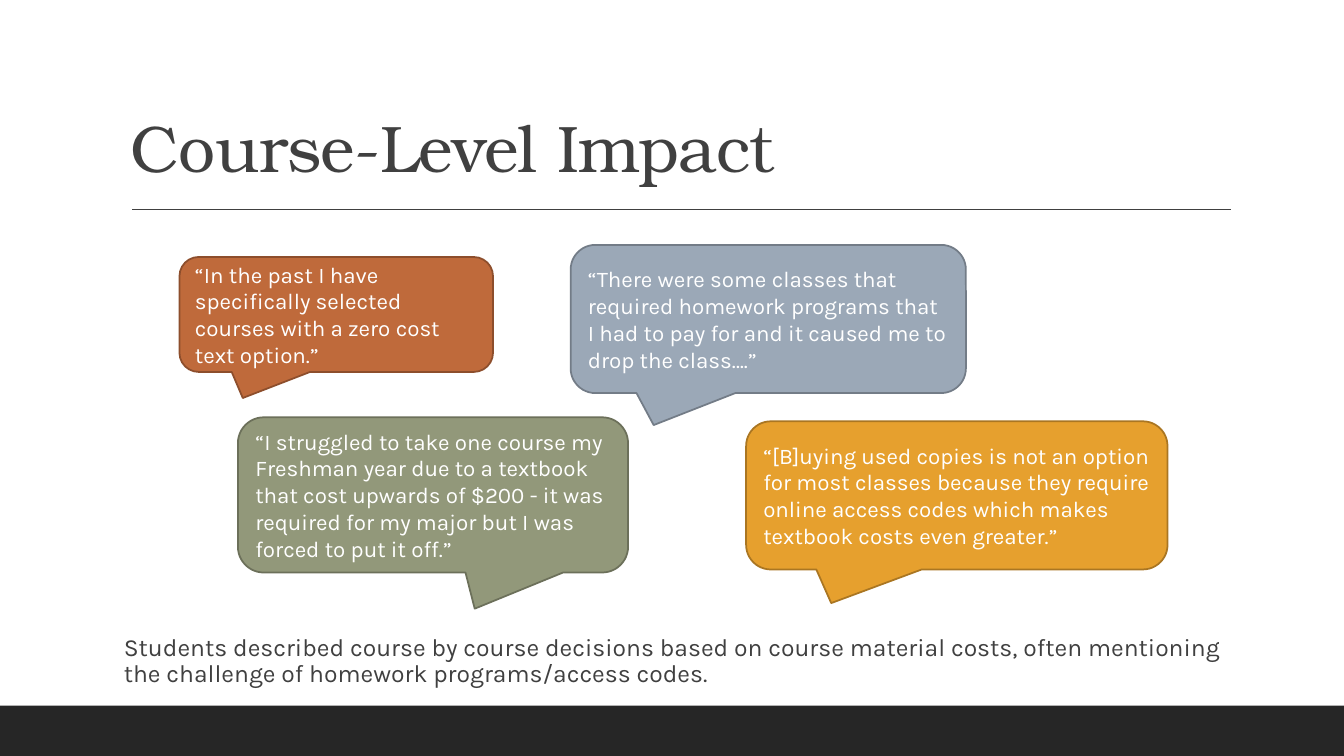
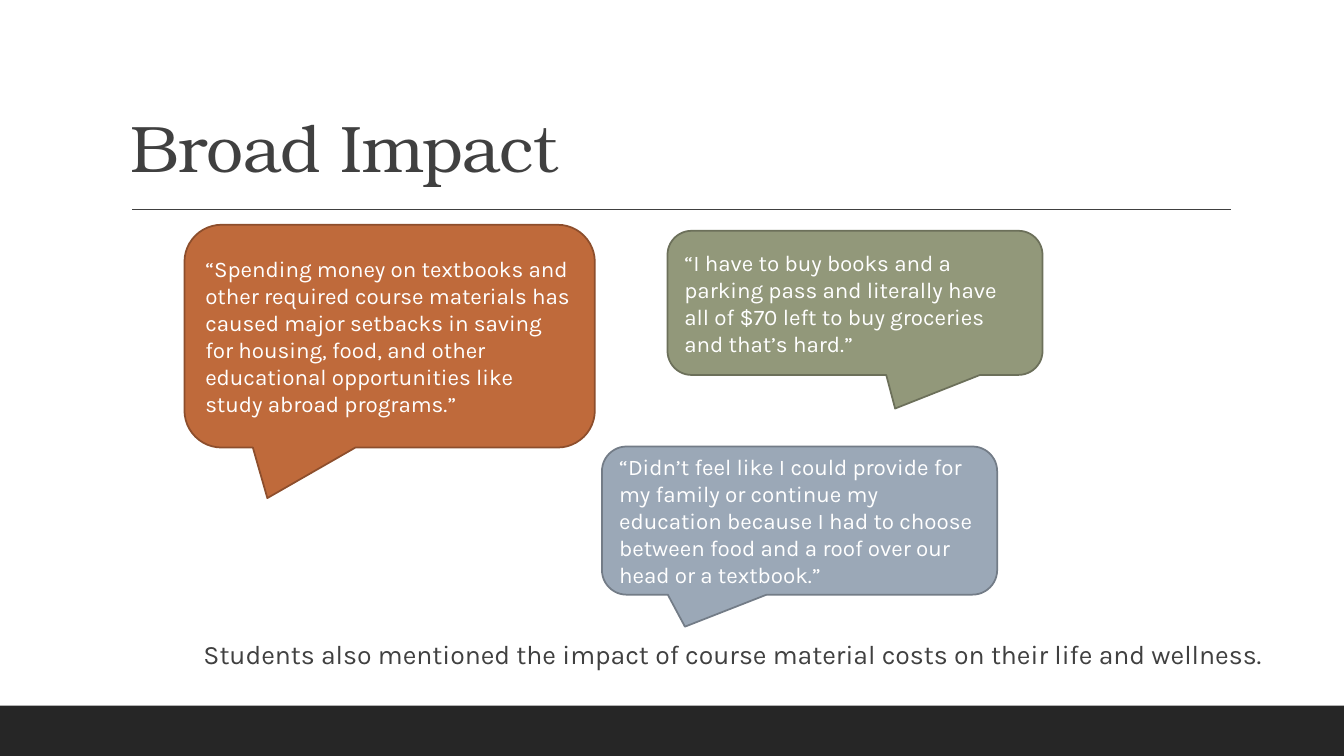
import pptx
import pptx.util
import pptx.dml.color
import pptx.enum.shapes
import pptx.enum.text
import lxml.etree
from dataclasses import dataclass

Inches, Pt = pptx.util.Inches, pptx.util.Pt
SHAPE = pptx.enum.shapes.MSO_SHAPE
ANCHOR = pptx.enum.text.MSO_ANCHOR
ALIGN = pptx.enum.text.PP_ALIGN


@dataclass(frozen=True)
class Theme:
    head: str = "TeX Gyre Bonum"
    body: str = "Karla"
    ink: str = "404040"
    band: str = "262626"
    white: str = "FFFFFF"
    title: float = 47
    quote: float = 16
    edge: float = 1.25


THEME = Theme()

# Callout style: fill, outline, tail tip from the centre as shares of the size
STYLES = {
    "blue": ("9BA8B7", "737C87", (-0.29, 0.716)),
    "rust": ("BF6A3B", "8D4E2C", (-0.298, 0.727)),
    "green": ("92987A", "6C705A", (0.107, 0.733)),
    "gold": ("E6A02E", "AA7622", (-0.298, 0.727)),
}

SLIDES = [
    {
        "title": "Course-Level Impact",
        "note": "Students described course by course decisions based on course "
                "material costs, often mentioning the challenge of homework "
                "programs/access codes.",
        "left": 1.13, "size": 17.6, "lead": 0.9,
        "quotes": [
            ("blue", (5.66, 2.43, 3.92, 1.47),
             "“There were some classes that required homework programs that "
             "I had to pay for and it caused me to drop the class….”"),
            ("rust", (1.78, 2.55, 3.11, 1.14),
             "“In the past I have specifically selected courses with a zero "
             "cost text option.”"),
            ("green", (2.36, 4.14, 3.87, 1.54),
             "“I struggled to take one course my Freshman year due to a "
             "textbook that cost upwards of $200 - it was required for my "
             "major but I was forced to put it off.”"),
            ("gold", (7.4, 4.18, 4.18, 1.47),
             "“[B]uying used copies is not an option for most classes because "
             "they require online access codes which makes textbook costs "
             "even greater.”"),
        ],
    },
    {
        "title": "Broad Impact",
        "note": "Students also mentioned the impact of course material costs "
                "on their life and wellness.",
        "left": 1.92, "size": 19, "lead": 1.1,
        "quotes": [
            ("blue", (5.97, 4.43, 3.92, 1.47),
             "“Didn’t feel like I could provide for my family or continue my "
             "education because I had to choose between food and a roof over "
             "our head or a textbook.”"),
            ("rust", (1.83, 2.23, 4.07, 2.21),
             "“Spending money on textbooks and other required course materials "
             "has caused major setbacks in saving for housing, food, and other "
             "educational opportunities like study abroad programs.”"),
            ("green", (6.62, 2.29, 3.72, 1.43),
             "“I have to buy books and a parking pass and literally have all "
             "of $70 left to buy groceries and that’s hard.”"),
        ],
    },
]


def rgb(code):
    return pptx.dml.color.RGBColor.from_string(code)


def inches(box):
    return [Inches(n) for n in box]


def write(shape, text, font, size, color, anchor):
    """Put one left-aligned paragraph in the shape and return it."""
    frame = shape.text_frame
    frame.word_wrap = True
    frame.vertical_anchor = anchor
    para = frame.paragraphs[0]
    para.text = text
    para.alignment = ALIGN.LEFT
    para.font.name = font
    para.font.size = Pt(size)
    para.font.color.rgb = rgb(color)
    return para


def add_solid(slide, kind, box, fill):
    shape = slide.shapes.add_shape(kind, *inches(box))
    shape.shadow.inherit = False
    shape.fill.solid()
    shape.fill.fore_color.rgb = rgb(fill)
    return shape


def add_frame(slide):
    """Draw the foot band and the rule under the title."""
    band = add_solid(slide, SHAPE.RECTANGLE, (0, 7, 13.33, 0.5), THEME.band)
    band.line.fill.background()
    rule = slide.shapes.add_connector(
        pptx.enum.shapes.MSO_CONNECTOR.STRAIGHT,
        *inches((1.31, 2.08, 12.21, 2.08)))
    rule.line.color.rgb = rgb(THEME.ink)
    rule.line.width = Pt(1)
    lxml.etree.SubElement(rule._element.spPr, pptx.oxml.ns.qn("a:effectLst"))


def add_title(slide, text):
    box = slide.shapes.add_textbox(*inches((1.2, 0.31, 11, 1.59)))
    para = write(box, text, THEME.head, THEME.title, THEME.ink, ANCHOR.BOTTOM)
    para.line_spacing = 0.9
    para.runs[0]._r.get_or_add_rPr().set("spc", "-50")


def add_note(slide, text, left, size, lead):
    box = slide.shapes.add_textbox(*inches((left, 6.25, 11, 0.65)))
    box.text_frame.margin_right = 0
    para = write(box, text, THEME.body, size, THEME.ink, ANCHOR.TOP)
    para.line_spacing = lead
    para.space_before = Pt(12)
    para.space_after = Pt(2)


def add_quote(slide, style, box, text):
    fill, edge, tip = STYLES[style]
    shape = add_solid(slide, SHAPE.ROUNDED_RECTANGULAR_CALLOUT, box, fill)
    shape.adjustments[0], shape.adjustments[1] = tip
    shape.line.color.rgb = rgb(edge)
    shape.line.width = Pt(THEME.edge)
    write(shape, text, THEME.body, THEME.quote, THEME.white, ANCHOR.MIDDLE)


def main():
    deck = pptx.Presentation()
    deck.slide_width, deck.slide_height = inches((13.33, 7.5))
    for page in SLIDES:
        slide = deck.slides.add_slide(deck.slide_layouts[6])
        add_frame(slide)
        add_title(slide, page["title"])
        add_note(slide, page["note"], page["left"], page["size"], page["lead"])
        for quote in page["quotes"]:
            add_quote(slide, *quote)
    deck.save("out.pptx")


if __name__ == "__main__":
    main()
